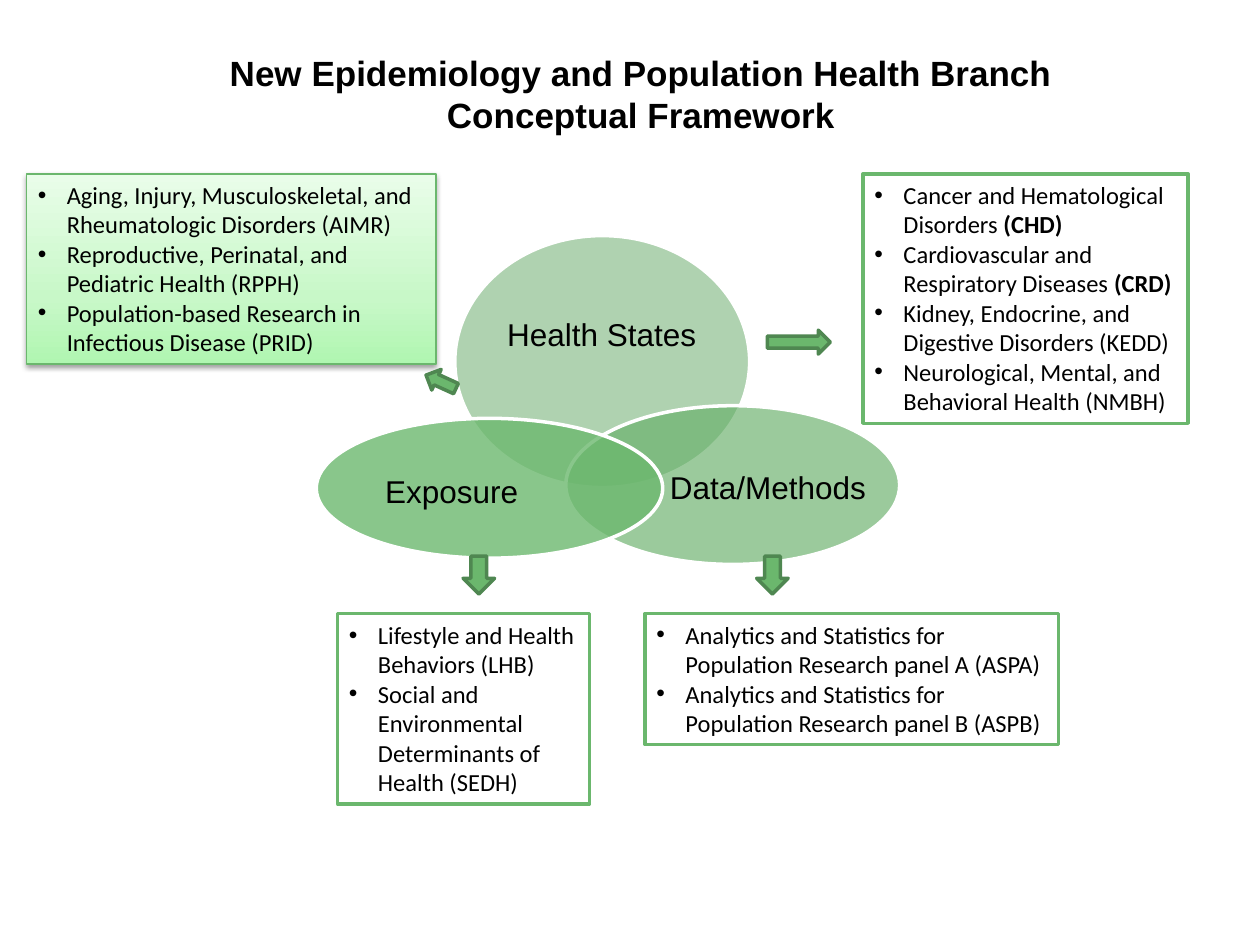
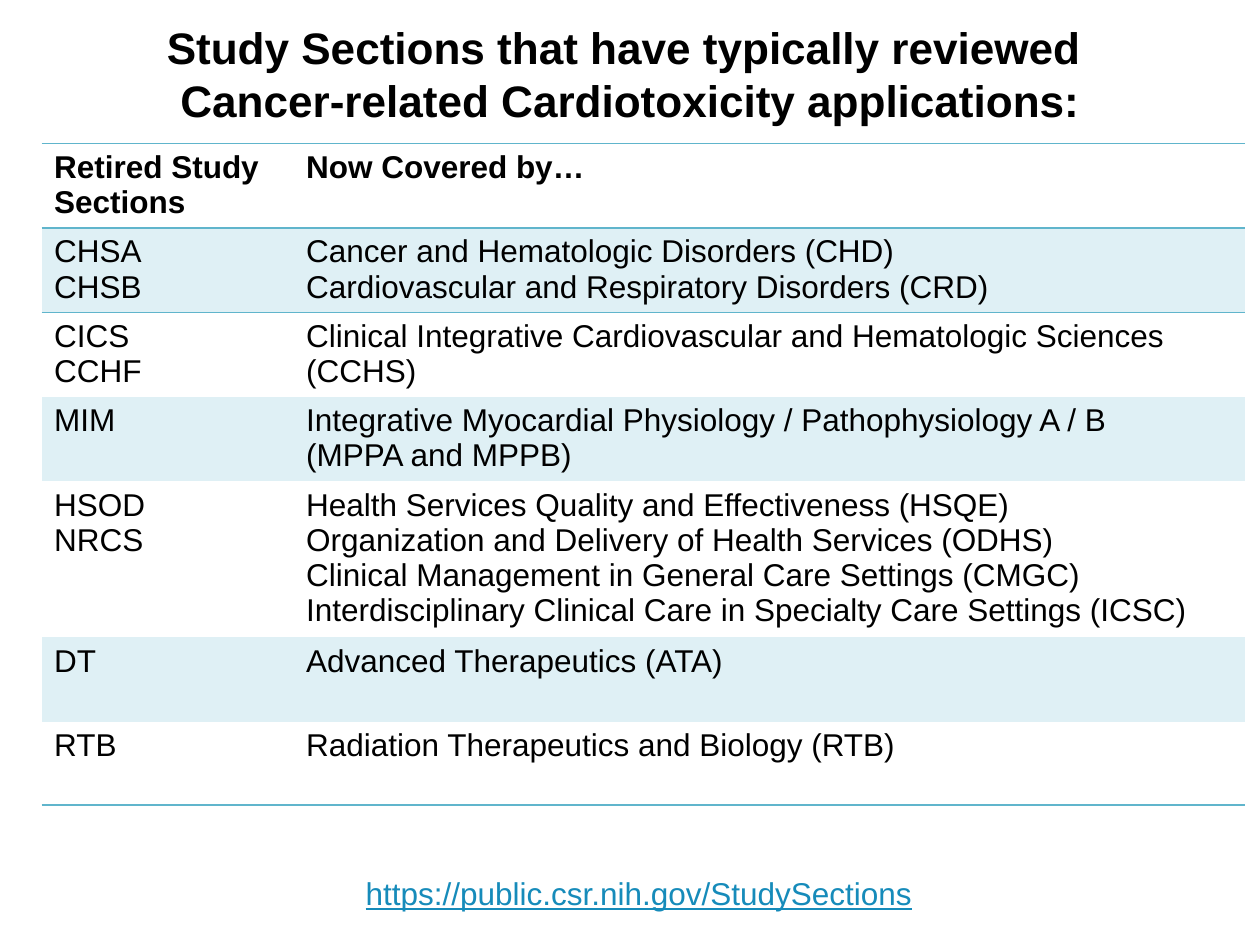
from copy import deepcopy
from dataclasses import dataclass

from lxml import etree
from pptx import Presentation
from pptx.dml.color import RGBColor
from pptx.enum.shapes import MSO_SHAPE
from pptx.enum.text import MSO_ANCHOR, MSO_AUTO_SIZE, PP_ALIGN
from pptx.oxml.ns import qn
from pptx.util import Inches, Pt

RECTANGLE, ELLIPSE, ARROW = MSO_SHAPE.RECTANGLE, MSO_SHAPE.OVAL, MSO_SHAPE.RIGHT_ARROW
LEFT, CENTER = PP_ALIGN.LEFT, PP_ALIGN.CENTER
TOP, MIDDLE = MSO_ANCHOR.TOP, MSO_ANCHOR.MIDDLE
NO_AUTOFIT = MSO_AUTO_SIZE.NONE

CELL = Inches(0.1)  # the slide is a grid of 100 columns by 75 rows
COLUMNS, ROWS = 100, 75
TITLE_ONLY = 5
PLAIN_TABLE_STYLE = "{2D5ABB26-0587-4C30-8999-92F81FD0307C}"


@dataclass(frozen=True)
class Theme:
    heading_font: str = "Arial"
    panel_font: str = "Calibri"
    text: str = "000000"
    white: str = "FFFFFF"
    green: str = "6BB76D"
    dark_green: str = "4F8751"
    gradient: tuple = ((0, "B0F6B1"), (0.35, "C8F8C8"), (1, "E9FDE9"))
    rule: str = "60B5CC"
    band: str = "DFF0F5"
    link: str = "168BBA"
    framework_title: float = 20
    sections_title: float = 25.2
    body: float = 18
    panel: float = 14
    outline: float = 2


THEME = Theme()


@dataclass(frozen=True)
class Box:
    """A rectangle in grid columns and rows."""
    left: float
    top: float
    width: float
    height: float

    def inside(self, left, top, width, height):
        return Box(self.left + left, self.top + top, width, height)

    def lengths(self):
        return [round(n * CELL) for n in (self.left, self.top, self.width, self.height)]


SLIDE = Box(0, 0, COLUMNS, ROWS)

# Ellipse and label boxes are relative to the diagram
VENN = (
    ("Health States", (11, 0, 23.4, 20), (14.1, 3.5, 17.1, 9), "61A663", 50),
    ("Data/Methods", (19.8, 13.5, 26.5, 12.6), (27.9, 16.7, 15.9, 6.9), "66AF68", 65),
    ("Exposure", (0, 14.5, 27.5, 11.1), (2.5, 17.4, 16.5, 6.1), "6CB86E", 80),
)
# A bar marks where bold text begins
PANELS = (
    ((68.5, 13.8, 25.8, 19.8), (
        "Cancer and Hematological Disorders |(CHD)",
        "Cardiovascular and Respiratory Diseases |(CRD)",
        "Kidney, Endocrine, and Digestive Disorders (KEDD)",
        "Neurological, Mental, and Behavioral Health (NMBH)")),
    ((26.8, 48.7, 20, 15.1), (
        "Lifestyle and Health Behaviors (LHB)",
        "Social and Environmental Determinants of Health (SEDH)")),
    ((51.2, 48.7, 32.8, 10.4), (
        "Analytics and Statistics for Population Research panel A (ASPA)",
        "Analytics and Statistics for Population Research panel B (ASPB)")),
)
SHADED_PANEL = ((2.1, 13.8, 32.5, 15.1), (
    "Aging, Injury, Musculoskeletal, and Rheumatologic Disorders (AIMR)",
    "Reproductive, Perinatal, and Pediatric Health (RPPH)",
    "Population-based Research in Infectious Disease (PRID)"))
ARROWS = (
    ((60.9, 26.2, 5, 1.9), 0),
    ((59.8, 44.4, 3, 2.5), 90),
    ((33.7, 29.4, 2.6, 1.8), 204.4),
    ((36.5, 44.4, 3, 2.5), 90),
)
SECTION_COLUMNS = (20, 75.5)
SECTION_ROWS = (
    (6.7, "Retired Study Sections", "Now Covered by…"),
    (6.7, "CHSA\nCHSB", "Cancer and Hematologic Disorders (CHD)\n"
                        "Cardiovascular and Respiratory Disorders (CRD)"),
    (6.7, "CICS\nCCHF",
     "Clinical Integrative Cardiovascular and Hematologic Sciences (CCHS)"),
    (6.7, "MIM", "Integrative Myocardial Physiology / Pathophysiology A / B\n"
                 "(MPPA and MPPB)"),
    (12.4, "HSOD\nNRCS", "Health Services Quality and Effectiveness (HSQE)\n"
                         "Organization and Delivery of Health Services (ODHS)\n"
                         "Clinical Management in General Care Settings (CMGC)\n"
                         "Interdisciplinary Clinical Care in Specialty Care Settings (ICSC)"),
    (6.7, "DT", "Advanced Therapeutics (ATA)"),
    (6.6, "RTB", "Radiation Therapeutics and Biology (RTB)"),
)


def rgb(color):
    return RGBColor.from_string(color)


def add_child(parent, tag, **attributes):
    child = etree.SubElement(parent, qn(tag))
    for name, value in attributes.items():
        child.set(name, str(value))
    return child


def format_font(font, size, name=THEME.heading_font, color=THEME.text, bold=False):
    font.size, font.name, font.bold = Pt(size), name, bold
    font.color.rgb = rgb(color)


def format_runs(text_frame, size, **style):
    for paragraph in text_frame.paragraphs:
        for run in paragraph.runs:
            format_font(run.font, size, **style)


def add_title_slide(presentation, text, box, size):
    slide = presentation.slides.add_slide(presentation.slide_layouts[TITLE_ONLY])
    title = slide.shapes.title
    title.left, title.top, title.width, title.height = box.lengths()
    frame = title.text_frame
    frame.text = text
    frame.auto_size, frame.vertical_anchor = NO_AUTOFIT, MIDDLE
    frame.paragraphs[0].alignment = CENTER
    format_runs(frame, size, bold=True)
    return slide


def add_filled_shape(slide, kind, box, fill, line, line_width=THEME.outline):
    shape = slide.shapes.add_shape(kind, *box.lengths())
    shape.shadow.inherit = False
    shape.fill.solid()
    shape.fill.fore_color.rgb = rgb(fill)
    shape.line.color.rgb = rgb(line)
    shape.line.width = Pt(line_width)
    return shape


def add_text(slide, box, text, line_spacing):
    text_box = slide.shapes.add_textbox(*box.lengths())
    frame = text_box.text_frame
    frame.word_wrap = True
    frame.text = text
    frame.paragraphs[0].alignment = CENTER
    frame.paragraphs[0].line_spacing = line_spacing
    format_runs(frame, THEME.body)
    return frame


def draw_venn(slide, box):
    for text, ellipse_place, label_place, color, opacity in VENN:
        ellipse = add_filled_shape(slide, ELLIPSE, box.inside(*ellipse_place),
                                   color, THEME.white)
        fill_color = ellipse.fill._xPr.find(qn("a:solidFill"))[0]
        add_child(fill_color, "a:alpha", val=opacity * 1000)
        frame = add_text(slide, box.inside(*label_place), text, 0.9)
        frame.vertical_anchor = MIDDLE
        frame.margin_left = frame.margin_right = 0
        frame.margin_top = frame.margin_bottom = 0


def add_bullet(paragraph):
    properties = paragraph._p.get_or_add_pPr()
    indent = Inches(0.23)
    properties.set("marL", str(indent))
    properties.set("indent", str(-indent))
    add_child(properties, "a:buFont", typeface="Arial")
    add_child(properties, "a:buChar", char="•")


def draw_panel(slide, box, items):
    panel = add_filled_shape(slide, RECTANGLE, box, THEME.white, THEME.green)
    frame = panel.text_frame
    frame.word_wrap, frame.vertical_anchor = True, TOP
    frame.margin_left = frame.margin_right = Inches(0.09)
    frame.text = "\n".join(item.partition("|")[0] for item in items)
    for paragraph, item in zip(frame.paragraphs, items):
        paragraph.alignment = LEFT
        add_bullet(paragraph)
        bold_text = item.partition("|")[2]
        if bold_text:
            paragraph.add_run().text = bold_text
        for index, run in enumerate(paragraph.runs):
            format_font(run.font, THEME.panel, THEME.panel_font, bold=index > 0)
    return panel


def shade_panel(panel):
    """Give a panel a vertical gradient, a thin line and a soft shadow."""
    panel.line.width = Pt(0.75)
    panel.fill.gradient()
    panel.fill.gradient_angle = 90
    properties = panel._element.spPr
    stops = properties.find(qn("a:gradFill")).find(qn("a:gsLst"))
    stops.insert(1, deepcopy(stops[0]))
    for stop, (position, color) in zip(panel.fill.gradient_stops, THEME.gradient):
        stop.position = position
        stop.color.rgb = rgb(color)
    shadow = add_child(properties.find(qn("a:effectLst")), "a:outerShdw",
                       blurRad=Pt(3.1), dist=Pt(1.6), dir=90 * 60000, rotWithShape=0)
    add_child(add_child(shadow, "a:srgbClr", val=THEME.text), "a:alpha", val=38000)


def add_rule(cell, side):
    line = etree.Element(qn(side), w=str(Pt(1)))
    add_child(add_child(line, "a:solidFill"), "a:srgbClr", val=THEME.rule)
    properties = cell._tc.get_or_add_tcPr()
    properties.insert(len(properties.findall(qn("a:lnT"))), line)


def draw_sections_table(slide, box):
    graphic_frame = slide.shapes.add_table(len(SECTION_ROWS), len(SECTION_COLUMNS),
                                           *box.lengths())
    table = graphic_frame.table
    table.first_row = table.horz_banding = False
    table._tbl.tblPr.find(qn("a:tableStyleId")).text = PLAIN_TABLE_STYLE
    for column, width in zip(table.columns, SECTION_COLUMNS):
        column.width = round(width * CELL)
    last = len(SECTION_ROWS) - 1
    for index, (height, *texts) in enumerate(SECTION_ROWS):
        table.rows[index].height = round(height * CELL)
        for cell, text in zip(table.rows[index].cells, texts):
            cell.text = text
            format_runs(cell.text_frame, THEME.body, bold=index == 0)
            if index % 2:
                cell.fill.solid()
                cell.fill.fore_color.rgb = rgb(THEME.band)
            else:
                cell.fill.background()
            if index == 0:
                add_rule(cell, "a:lnT")
            if index in (0, last):
                add_rule(cell, "a:lnB")
            if index == 1:
                add_rule(cell, "a:lnT")


def build_framework_slide(presentation):
    slide = add_title_slide(
        presentation,
        "New Epidemiology and Population Health Branch \vConceptual Framework ",
        SLIDE.inside(2.5, 3.3, 97.5, 8.3), THEME.framework_title)
    draw_venn(slide, SLIDE.inside(25.1, 18.7, 46.3, 26.1))
    for place, items in PANELS:
        draw_panel(slide, SLIDE.inside(*place), items)
    place, items = SHADED_PANEL
    shade_panel(draw_panel(slide, SLIDE.inside(*place), items))
    for place, rotation in ARROWS:
        arrow = add_filled_shape(slide, ARROW, SLIDE.inside(*place),
                                 THEME.green, THEME.dark_green)
        arrow.rotation = rotation


def build_sections_slide(presentation):
    slide = add_title_slide(
        presentation,
        "Study Sections that have typically reviewed \v"
        "Cancer-related Cardiotoxicity applications:",
        SLIDE.inside(5, 1.7, 90, 8.3), THEME.sections_title)
    table_height = sum(row[0] for row in SECTION_ROWS)
    draw_sections_table(slide, SLIDE.inside(3.3, 11.4, sum(SECTION_COLUMNS), table_height))
    frame = add_text(slide, SLIDE.inside(25.7, 67.4, 50, 5),
                     "https://public.csr.nih.gov/StudySections", 1.5)
    format_runs(frame, THEME.body, color=THEME.link)
    frame.paragraphs[0].runs[0].font.underline = True


def main():
    presentation = Presentation()
    presentation.slide_width = COLUMNS * CELL
    presentation.slide_height = ROWS * CELL
    build_framework_slide(presentation)
    build_sections_slide(presentation)
    presentation.save("out.pptx")


if __name__ == "__main__":
    main()
